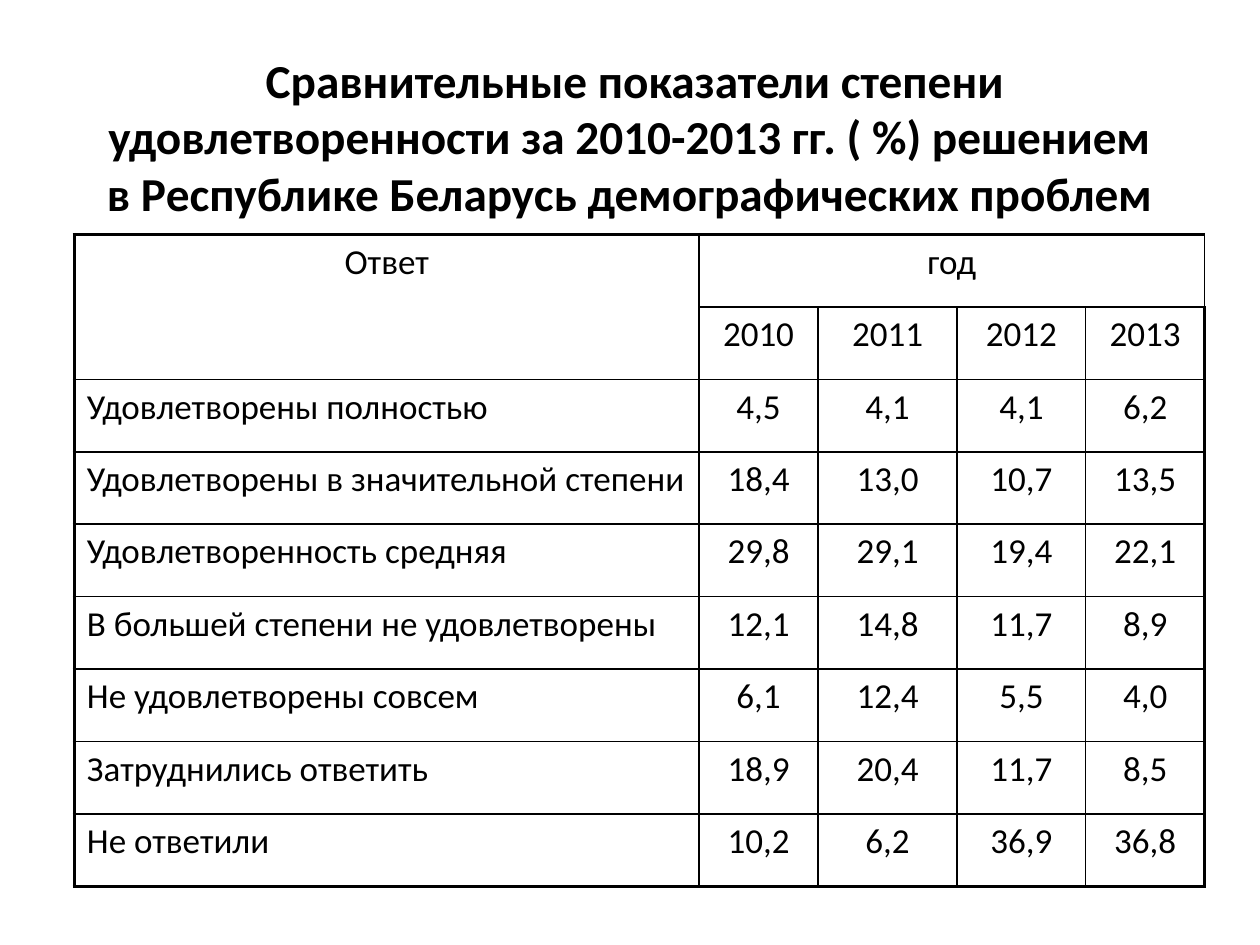
import pptx
import pptx.dml.color
import pptx.enum.text
import pptx.oxml.ns
import pptx.util
import lxml.etree

Pt = pptx.util.Pt
ALIGN = pptx.enum.text.PP_ALIGN
ANCHOR = pptx.enum.text.MSO_ANCHOR

FONT = "Calibri"
BLACK = "000000"
OUTER_LINE, INNER_LINE = 2.25, 1

TITLE_LINES = [
    "Сравнительные показатели степени удовлетворенности за 2010-2013 гг. ( %) решением ",
    "в Республике Беларусь демографических проблем ",
]
HEADER_ROWS = [
    ["Ответ", "год", "", "", ""],
    ["", "2010", "2011", "2012", "2013"],
]
ANSWERS = [
    ["Удовлетворены полностью", "4,5", "4,1", "4,1", "6,2"],
    ["Удовлетворены в значительной степени", "18,4", "13,0", "10,7", "13,5"],
    ["Удовлетворенность средняя", "29,8", "29,1", "19,4", "22,1"],
    ["В большей степени не удовлетворены", "12,1", "14,8", "11,7", "8,9"],
    ["Не удовлетворены совсем", "6,1", "12,4", "5,5", "4,0"],
    ["Затруднились ответить", "18,9", "20,4", "11,7", "8,5"],
    ["Не ответили", "10,2", "6,2", "36,9", "36,8"],
]
COLUMN_WIDTHS = [357, 68, 79.5, 73.5, 68]
ROW_HEIGHT = 41.4


def color(hex_value):
    return pptx.dml.color.RGBColor.from_string(hex_value)


def add_run(paragraph, text, size, bold=False):
    run = paragraph.add_run()
    run.text = text
    run.font.name = FONT
    run.font.size = Pt(size)
    run.font.bold = bold
    run.font.color.rgb = color(BLACK)


def add_title(slide):
    title = slide.shapes.title
    title.left, title.top = Pt(36.5), Pt(21.5)
    title.width, title.height = Pt(652.5), Pt(112.5)
    frame = title.text_frame
    frame.word_wrap = True
    frame.auto_size = pptx.enum.text.MSO_AUTO_SIZE.NONE
    frame.vertical_anchor = ANCHOR.MIDDLE
    heading = frame.paragraphs[0]
    heading.alignment = ALIGN.CENTER
    for index, line in enumerate(TITLE_LINES):
        if index:
            heading.add_line_break()
        add_run(heading, line, 27, bold=True)


def set_borders(cell, widths):
    """Draw the cell's lines; the schema wants left, right, top, bottom, then fill."""
    properties = cell._tc.get_or_add_tcPr()
    qn = pptx.oxml.ns.qn
    for position, (side, width) in enumerate(widths.items()):
        line = lxml.etree.Element(qn("a:" + side), w=str(Pt(width)))
        fill = lxml.etree.SubElement(line, qn("a:solidFill"))
        lxml.etree.SubElement(fill, qn("a:srgbClr"), val=BLACK)
        properties.insert(position, line)


def fill_cell(cell, text, alignment):
    cell.fill.background()
    cell.vertical_anchor = ANCHOR.TOP
    if text:
        paragraph = cell.text_frame.paragraphs[0]
        paragraph.alignment = alignment
        paragraph.space_before = Pt(4)
        add_run(paragraph, text, 20)


def add_answer_table(slide):
    rows = HEADER_ROWS + ANSWERS
    last_row, last_column = len(rows) - 1, len(COLUMN_WIDTHS) - 1
    table = slide.shapes.add_table(
        len(rows), len(COLUMN_WIDTHS), Pt(42.5), Pt(134),
        Pt(sum(COLUMN_WIDTHS)), Pt(ROW_HEIGHT * len(rows))).table
    table.first_row = table.horz_banding = False
    for column, width in zip(table.columns, COLUMN_WIDTHS):
        column.width = Pt(width)

    for r, values in enumerate(rows):
        table.rows[r].height = Pt(ROW_HEIGHT)
        for c, value in enumerate(values):
            is_answer = c == 0 and r >= len(HEADER_ROWS)
            cell = table.cell(r, c)
            fill_cell(cell, value, ALIGN.LEFT if is_answer else ALIGN.CENTER)
            on_edge = {"lnL": c == 0, "lnR": c == last_column,
                       "lnT": r == 0, "lnB": r == last_row}
            set_borders(cell, {side: OUTER_LINE if outer else INNER_LINE
                               for side, outer in on_edge.items()})

    # Header spans: answer over two rows, year over four columns
    table.cell(0, 0).merge(table.cell(1, 0))
    table.cell(0, 1).merge(table.cell(0, last_column))


def main():
    deck = pptx.Presentation()
    deck.slide_width, deck.slide_height = Pt(720), Pt(540)
    slide = deck.slides.add_slide(deck.slide_layouts[5])  # title only
    add_title(slide)
    add_answer_table(slide)
    deck.save("out.pptx")


if __name__ == "__main__":
    main()
